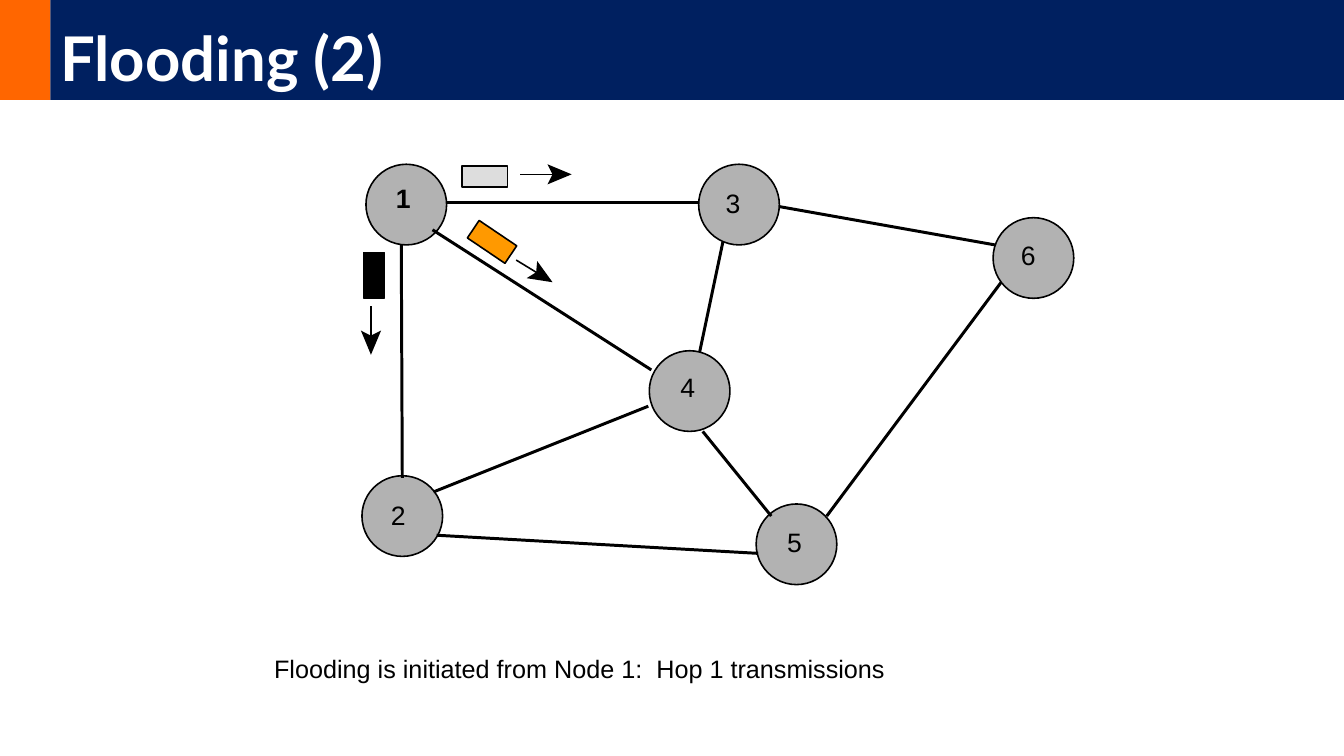
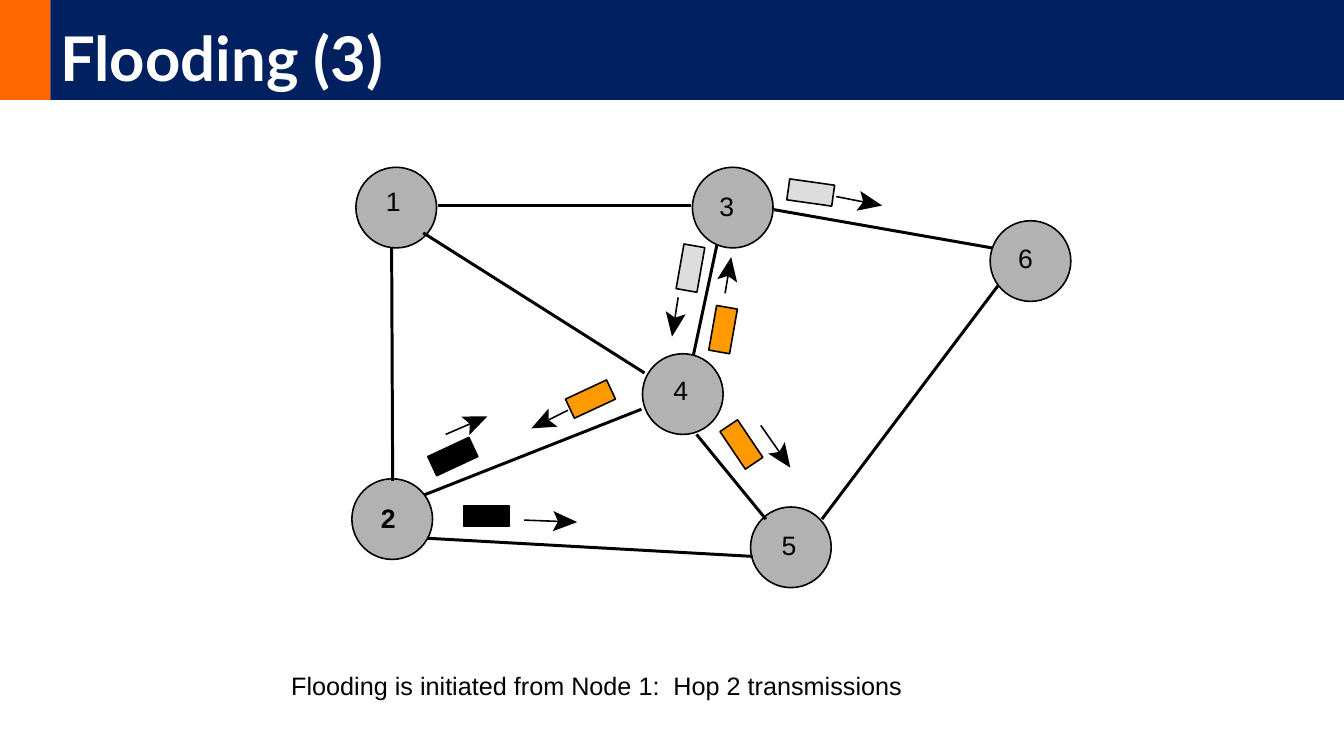
from dataclasses import dataclass
from math import hypot

from lxml.etree import SubElement
from pptx import Presentation
from pptx.dml.color import RGBColor
from pptx.enum.shapes import MSO_CONNECTOR, MSO_SHAPE
from pptx.enum.text import MSO_ANCHOR, PP_ALIGN
from pptx.oxml.ns import qn
from pptx.util import Inches, Pt


@dataclass(frozen=True)
class Theme:
    navy: str = "002060"
    accent: str = "FF6600"
    white: str = "FFFFFF"
    black: str = "000000"
    node: str = "B2B2B2"
    grey: str = "DDDDDD"
    orange: str = "FF9900"
    title_font: str = "Lato"
    body_font: str = "Arial"
    title_size: int = 44
    label_size: int = 19
    caption_size: int = 18
    thin: float = 1.13
    thick: float = 2.13


THEME = Theme()
SLIDE_WIDTH, SLIDE_HEIGHT = 13.33, 7.5
BAND_HEIGHT = 0.99
ACCENT_WIDTH = 0.5
GRID_COLUMNS, GRID_ROWS = 7.06, 4.16
NODE_SIZE = 0.8
ELLIPSE_INSET = 0.12
PACKET_LENGTH, PACKET_WIDTH = 0.45, 0.21
HEAD_LENGTH, HEAD_HALF_WIDTH, HEAD_NOTCH = 0.24, 0.1, 0.05

NODES = {
    "1": ((0.04, 0), (0.3, 0.18)),
    "2": ((0, 3.09), (0.29, 0.23)),
    "3": ((3.34, 0), (0.27, 0.23)),
    "4": ((2.85, 1.85), (0.31, 0.2)),
    "5": ((3.91, 3.37), (0.31, 0.22)),
    "6": ((6.26, 0.53), (0.28, 0.21)),
}

LINKS = [
    ((0.84, 0.38), (3.33, 0.38)),
    ((3.58, 0.77), (3.35, 1.86)),
    ((3.38, 2.65), (4.06, 3.49)),
    ((4.14, 0.42), (6.28, 0.8)),
    ((4.61, 3.49), (6.34, 1.17)),
    ((0.74, 3.68), (3.93, 3.86)),
    ((0.39, 0.8), (0.4, 3.11)),
    ((0.7, 0.65), (2.87, 2.04)),
    ((0.71, 3.25), (2.84, 2.4)),
]


@dataclass(frozen=True)
class Box:
    left: float
    top: float
    width: float
    height: float

    def at(self, point):
        column, row = point
        return (
            self.left + self.width * column / GRID_COLUMNS,
            self.top + self.height * row / GRID_ROWS,
        )


@dataclass(frozen=True)
class Hop:
    title: str
    caption: str
    caption_box: Box
    network_box: Box
    sender: str
    packets: tuple
    arrows: tuple


HOPS = [
    Hop(
        title="Flooding (2)",
        caption="Flooding is initiated from Node 1:  Hop 1 transmissions",
        caption_box=Box(2.62, 6.43, 6.71, 0.4),
        network_box=Box(3.59, 1.63, 7.06, 4.16),
        sender="1",
        packets=(
            ((1.22, 0.12), 0, THEME.grey),
            ((0.12, 1.1), 90, THEME.black),
            ((1.29, 0.77), 34, THEME.orange),
        ),
        arrows=(
            ((1.57, 0.1), (2.08, 0.1)),
            ((1.53, 0.95), (1.89, 1.17)),
            ((0.09, 1.41), (0.09, 1.89)),
        ),
    ),
    Hop(
        title="Flooding (3)",
        caption="Flooding is initiated from Node 1:  Hop 2 transmissions",
        caption_box=Box(2.79, 6.6, 6.71, 0.4),
        network_box=Box(3.49, 1.66, 7.14, 4.16),
        sender="2",
        packets=(
            ((1.32, 3.46), 0, THEME.black),
            ((4.5, 0.25), 8, THEME.grey),
            ((3.32, 1), 100, THEME.grey),
            ((3.64, 1.61), 100, THEME.orange),
            ((3.82, 2.75), 56, THEME.orange),
            ((2.34, 2.3), -25, THEME.orange),
            ((0.99, 2.87), -25, THEME.black),
        ),
        arrows=(
            ((4.75, 0.29), (5.2, 0.38)),
            ((3.2, 1.29), (3.14, 1.68)),
            ((3.66, 1.25), (3.72, 0.89)),
            ((2.12, 2.41), (1.76, 2.59)),
            ((0.92, 2.65), (1.33, 2.47)),
            ((1.69, 3.5), (2.21, 3.52)),
            ((4.01, 2.56), (4.3, 2.98)),
        ),
    ),
]


def paint(shape, fill, outlined=False):
    shape.shadow.inherit = False
    shape.fill.solid()
    shape.fill.fore_color.rgb = RGBColor.from_string(fill)
    if outlined:
        shape.line.color.rgb = RGBColor.from_string(THEME.black)
        shape.line.width = Pt(THEME.thin)
    else:
        shape.line.fill.background()


def add_block(page, kind, box, fill, outlined=False):
    sides = (box.left, box.top, box.width, box.height)
    shape = page.shapes.add_shape(kind, *map(Inches, sides))
    paint(shape, fill, outlined)
    return shape


def write(shape, text, font, size, color, bold=False):
    shape.text_frame.word_wrap = True
    para = shape.text_frame.paragraphs[0]
    para.text = text
    para.alignment = PP_ALIGN.LEFT
    para.font.name = font
    para.font.size = Pt(size)
    para.font.bold = bold
    para.font.color.rgb = RGBColor.from_string(color)
    return para


def add_line(page, start, end, width):
    line = page.shapes.add_connector(
        MSO_CONNECTOR.STRAIGHT, *map(Inches, (*start, *end))
    )
    line.line.color.rgb = RGBColor.from_string(THEME.black)
    line.line.width = Pt(width)
    SubElement(line._element.spPr, qn("a:effectLst"))


def add_header(page, title):
    accent_box = Box(0, 0, ACCENT_WIDTH, BAND_HEIGHT)
    add_block(page, MSO_SHAPE.RECTANGLE, accent_box, THEME.accent)
    title_box = Box(ACCENT_WIDTH, 0, SLIDE_WIDTH - ACCENT_WIDTH, BAND_HEIGHT)
    band = add_block(page, MSO_SHAPE.RECTANGLE, title_box, THEME.navy)
    band.text_frame.vertical_anchor = MSO_ANCHOR.BOTTOM
    para = write(
        band, title, THEME.title_font, THEME.title_size, THEME.white, bold=True
    )
    para.line_spacing = 0.9


def add_node(page, corner, name, label_offset, bold):
    node_box = Box(*corner, NODE_SIZE, NODE_SIZE)
    node = add_block(page, MSO_SHAPE.OVAL, node_box, THEME.node, outlined=True)
    frame = node.text_frame
    frame.vertical_anchor = MSO_ANCHOR.TOP
    across, down = label_offset
    frame.margin_left = Inches(across - ELLIPSE_INSET)
    frame.margin_top = Inches(down - ELLIPSE_INSET)
    frame.margin_right = frame.margin_bottom = 0
    write(node, name, THEME.body_font, THEME.label_size, THEME.black, bold)


def add_packet(page, center, angle, fill):
    x, y = center
    packet_box = Box(
        x - PACKET_LENGTH / 2, y - PACKET_WIDTH / 2, PACKET_LENGTH, PACKET_WIDTH
    )
    packet = add_block(page, MSO_SHAPE.RECTANGLE, packet_box, fill, outlined=True)
    packet.rotation = angle


def add_arrow(page, start, tip):
    run, rise = tip[0] - start[0], tip[1] - start[1]
    length = hypot(run, rise)
    run, rise = run / length, rise / length

    def behind(back, aside=0):
        return tip[0] - back * run - aside * rise, tip[1] - back * rise + aside * run

    notch = behind(HEAD_LENGTH - HEAD_NOTCH)
    add_line(page, start, notch, THEME.thin)
    corners = [
        tip,
        behind(HEAD_LENGTH, HEAD_HALF_WIDTH),
        notch,
        behind(HEAD_LENGTH, -HEAD_HALF_WIDTH),
    ]
    points = [(Inches(x), Inches(y)) for x, y in corners]
    builder = page.shapes.build_freeform(*points[0])
    builder.add_line_segments(points[1:], close=True)
    paint(builder.convert_to_shape(), THEME.black)


def add_network(page, box, hop):
    for name, (corner, label_offset) in NODES.items():
        add_node(page, box.at(corner), name, label_offset, name == hop.sender)
    for start, end in LINKS:
        add_line(page, box.at(start), box.at(end), THEME.thick)
    for center, angle, fill in hop.packets:
        add_packet(page, box.at(center), angle, fill)
    for start, tip in hop.arrows:
        add_arrow(page, box.at(start), box.at(tip))


def add_caption(page, box, text):
    sides = (box.left, box.top, box.width, box.height)
    caption = page.shapes.add_textbox(*map(Inches, sides))
    write(caption, text, THEME.body_font, THEME.caption_size, THEME.black)


def add_hop_slide(deck, hop):
    page = deck.slides.add_slide(deck.slide_layouts[6])
    add_network(page, hop.network_box, hop)
    add_caption(page, hop.caption_box, hop.caption)
    add_header(page, hop.title)


def main():
    deck = Presentation()
    deck.slide_width = Inches(SLIDE_WIDTH)
    deck.slide_height = Inches(SLIDE_HEIGHT)
    for hop in HOPS:
        add_hop_slide(deck, hop)
    deck.save("out.pptx")


if __name__ == "__main__":
    main()
